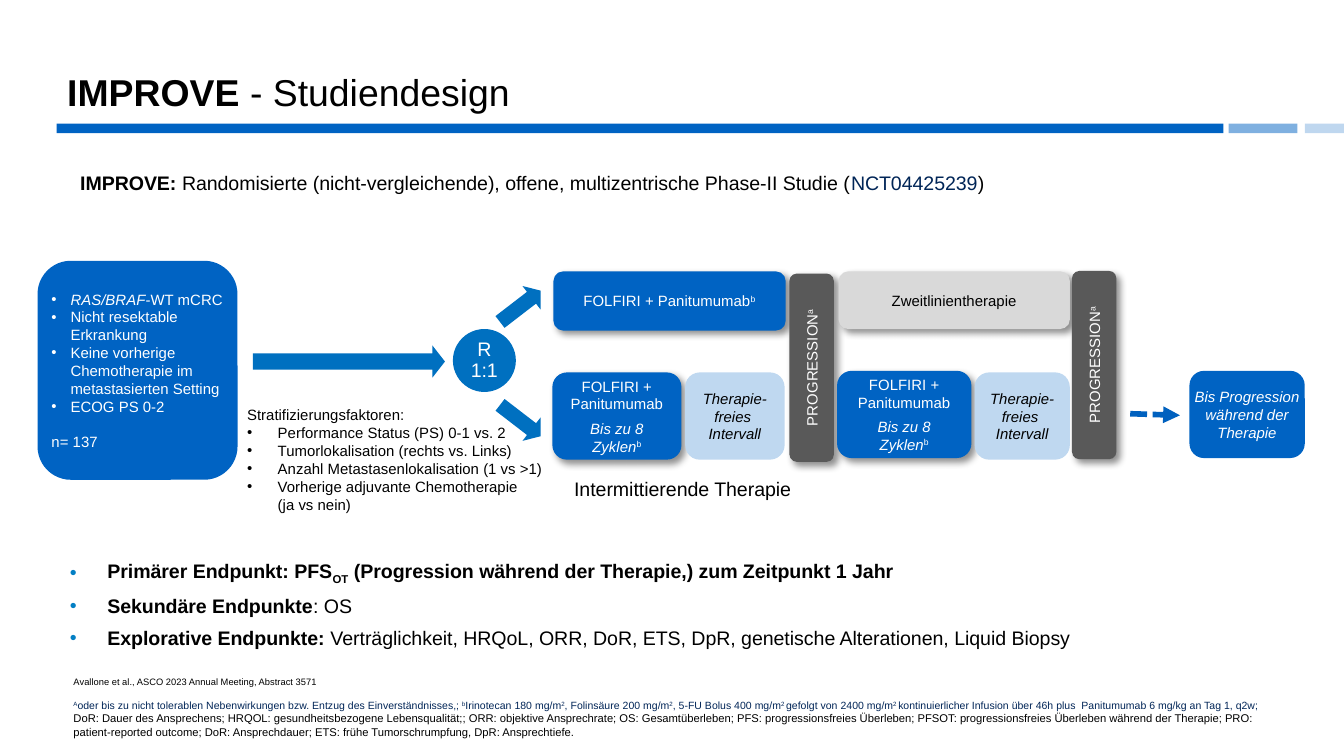
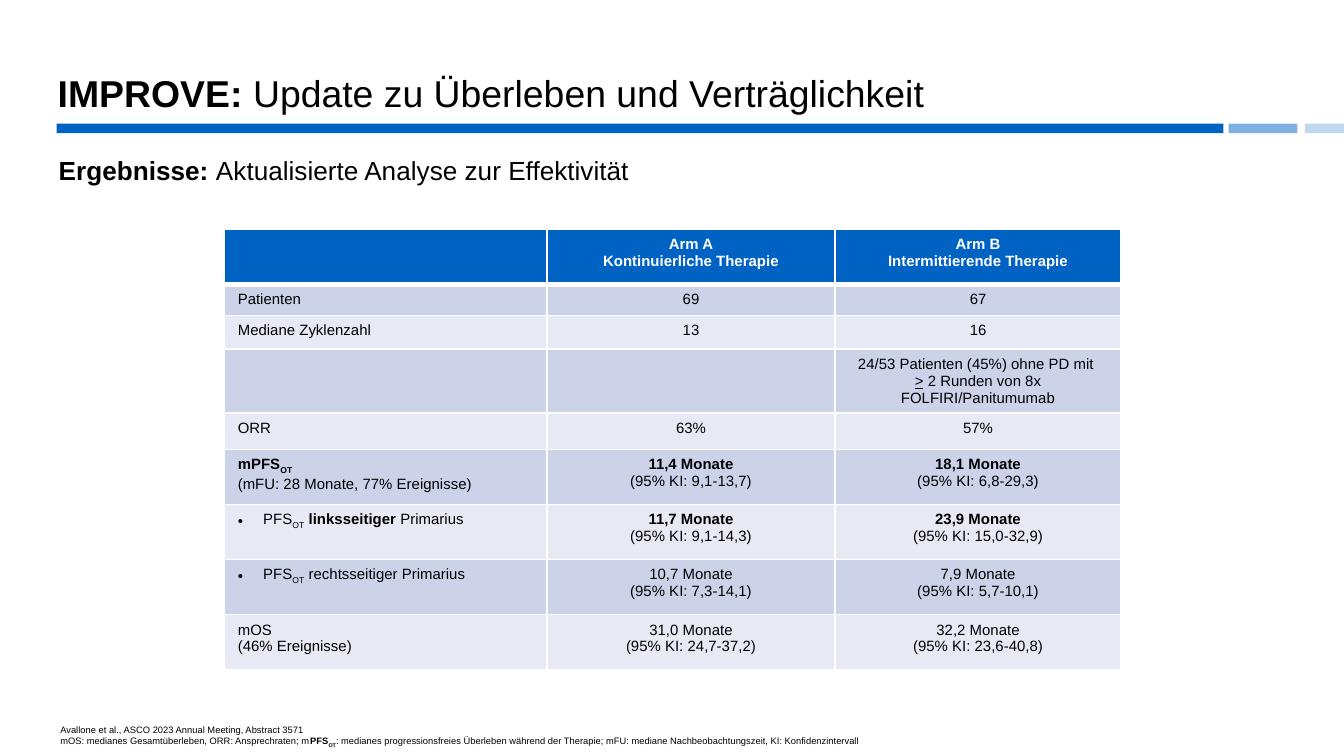
"""Build two slides on the design and the results of the IMPROVE study."""
from dataclasses import dataclass

from lxml import etree
from pptx import Presentation
from pptx.dml.color import RGBColor
from pptx.enum.dml import MSO_LINE
from pptx.enum.shapes import MSO_CONNECTOR, MSO_SHAPE
from pptx.enum.text import MSO_ANCHOR, MSO_AUTO_SIZE, PP_ALIGN
from pptx.oxml import parse_xml
from pptx.oxml.ns import nsdecls, qn
from pptx.shapes.autoshape import Shape
from pptx.slide import Slide
from pptx.table import _Cell
from pptx.text.text import TextFrame, _Paragraph
from pptx.util import Cm, Pt

FONT = "Arial"
BLUE = RGBColor(0x00, 0x63, 0xC3)
ARROW_BLUE = RGBColor(0x00, 0x70, 0xC0)
DASH_BLUE = RGBColor(0x00, 0x61, 0xBF)
BULLET_BLUE = RGBColor(0x03, 0x7F, 0xC4)
PALE_BLUE = RGBColor(0xBF, 0xD8, 0xF0)
NAVY = RGBColor(0x00, 0x25, 0x57)
DARK_GREY = RGBColor(0x59, 0x59, 0x59)
LIGHT_GREY = RGBColor(0xD9, 0xD9, 0xD9)
ROW_DARK = RGBColor(0xCC, 0xD3, 0xE9)
ROW_LIGHT = RGBColor(0xE7, 0xEA, 0xF5)
BLACK = RGBColor(0, 0, 0)
WHITE = RGBColor(0xFF, 0xFF, 0xFF)

LEFT, CENTER = PP_ALIGN.LEFT, PP_ALIGN.CENTER
TOP, MIDDLE, BOTTOM = MSO_ANCHOR.TOP, MSO_ANCHOR.MIDDLE, MSO_ANCHOR.BOTTOM
RECTANGLE, ROUNDED = MSO_SHAPE.RECTANGLE, MSO_SHAPE.ROUNDED_RECTANGLE
OVAL, RIGHT_ARROW = MSO_SHAPE.OVAL, MSO_SHAPE.RIGHT_ARROW
STRAIGHT, SYSTEM_DASH = MSO_CONNECTOR.STRAIGHT, MSO_LINE.SQUARE_DOT
NO_AUTOFIT = MSO_AUTO_SIZE.NONE

SUB, SUPER = -25, 30
DEFAULT_INSETS = (0.25, 0.13, 0.25, 0.13)
CITATION = "Avallone et al., ASCO 2023 Annual Meeting, Abstract 3571"


@dataclass(frozen=True)
class Run:
    """A stretch of text in one format."""
    text: str
    bold: bool = False
    italic: bool = False
    underline: bool = False
    baseline: int = 0
    color: RGBColor | None = None
    size: float | None = None


@dataclass(frozen=True)
class Passage:
    """A paragraph with its indent in centimetres and its spacing."""
    runs: tuple[Run, ...]
    indent: float = 0
    bulleted: bool = False
    bullet_color: RGBColor | None = None
    before: float = 0
    after: float = 0
    spacing: float = 1.0


@dataclass(frozen=True)
class Style:
    """Text settings shared by all passages of a frame."""
    size: float = 8
    color: RGBColor = BLACK
    align: PP_ALIGN = LEFT
    anchor: MSO_ANCHOR = TOP
    insets: tuple[float, float, float, float] = DEFAULT_INSETS
    wrap: bool = True


@dataclass(frozen=True)
class Box:
    """A preset shape, or a text box where kind is None, in centimetres."""
    left: float
    top: float
    width: float
    height: float
    passages: tuple[Passage, ...] = ()
    style: Style = Style()
    kind: MSO_SHAPE | None = None
    fill: RGBColor = BLUE
    alpha: int = 100
    rotation: float = 0
    shadow: bool = False


ON_BLUE = Style(color=WHITE, align=CENTER, anchor=MIDDLE)
ON_PALE = Style(align=CENTER, anchor=MIDDLE, insets=(0, 0.13, 0, 0.13))
IN_END = Style(color=WHITE, align=CENTER, anchor=MIDDLE, insets=(0, 0.13, 0, 0.13))
TITLE_STYLE = Style(size=20, anchor=BOTTOM, insets=(0, 0, 0, 0.13))


def passage(*parts: str | Run, **settings) -> Passage:
    """Make a passage from plain strings and formatted runs."""
    runs = tuple(Run(part) if isinstance(part, str) else part for part in parts)
    return Passage(runs, **settings)


def bullet(*parts: str | Run, indent: float, **settings) -> Passage:
    """Make a bulleted passage."""
    return passage(*parts, indent=indent, bulleted=True, **settings)


def bold(text: str, baseline: int = 0) -> Run:
    """Make a bold run."""
    return Run(text, bold=True, baseline=baseline)


def add_bullet(paragraph: _Paragraph, item: Passage) -> None:
    """Give a paragraph a hanging bullet."""
    properties = paragraph._p.get_or_add_pPr()
    properties.set("marL", str(Cm(item.indent)))
    properties.set("indent", str(-Cm(item.indent)))
    if item.bullet_color is not None:
        color = etree.SubElement(properties, qn("a:buClr"))
        etree.SubElement(color, qn("a:srgbClr"), val=str(item.bullet_color))
    etree.SubElement(properties, qn("a:buFont"), typeface=FONT)
    etree.SubElement(properties, qn("a:buChar"), char="•")


def write_run(paragraph: _Paragraph, item: Run, style: Style) -> None:
    """Add a run, turning its newlines into line breaks of the same size."""
    size = item.size or style.size
    for index, text in enumerate(item.text.split("\n")):
        if index:
            paragraph.add_line_break()
            line_break = paragraph._p.findall(qn("a:br"))[-1]
            etree.SubElement(line_break, qn("a:rPr"), sz=str(round(size * 100)))
        run = paragraph.add_run()
        run.text = text
        font = run.font
        font.name, font.size = FONT, Pt(size)
        font.bold, font.italic, font.underline = item.bold, item.italic, item.underline
        font.color.rgb = style.color if item.color is None else item.color
        if item.baseline:
            run._r.get_or_add_rPr().set("baseline", str(item.baseline * 1000))


def write_passages(frame: TextFrame, passages: tuple[Passage, ...], style: Style) -> None:
    """Fill a text frame with passages."""
    for index, item in enumerate(passages):
        paragraph = frame.add_paragraph() if index else frame.paragraphs[0]
        paragraph.alignment = style.align
        paragraph.line_spacing = item.spacing
        paragraph.space_before, paragraph.space_after = Pt(item.before), Pt(item.after)
        if item.bulleted:
            add_bullet(paragraph, item)
        for run in item.runs:
            write_run(paragraph, run, style)


def format_frame(frame: TextFrame, passages: tuple[Passage, ...], style: Style) -> None:
    """Set up a text frame and write its passages."""
    frame.auto_size = NO_AUTOFIT
    frame.word_wrap = style.wrap
    frame.vertical_anchor = style.anchor
    (frame.margin_left, frame.margin_top,
     frame.margin_right, frame.margin_bottom) = map(Cm, style.insets)
    write_passages(frame, passages, style)


def add_shadow(shape: Shape) -> None:
    """Cast a soft shadow to the lower right."""
    effects = shape._element.spPr.find(qn("a:effectLst"))
    effects.append(parse_xml(
        f'<a:outerShdw {nsdecls("a")} blurRad="{Pt(4)}" dist="{Pt(3)}" dir="2700000" '
        'algn="tl" rotWithShape="0"><a:srgbClr val="000000"><a:alpha val="43000"/>'
        '</a:srgbClr></a:outerShdw>'))


def draw_box(slide: Slide, box: Box) -> None:
    """Draw a shape or a text box."""
    place = [Cm(value) for value in (box.left, box.top, box.width, box.height)]
    if box.kind is None:
        shape = slide.shapes.add_textbox(*place)
    else:
        shape = slide.shapes.add_shape(box.kind, *place)
        shape.shadow.inherit = False
        shape.fill.solid()
        shape.fill.fore_color.rgb = box.fill
        shape.line.fill.background()
        shape.rotation = box.rotation
        if box.kind == RIGHT_ARROW:
            shape.adjustments[1] = 0.39
        if box.alpha < 100:
            color = shape._element.spPr.find(qn("a:solidFill"))[0]
            etree.SubElement(color, qn("a:alpha"), val=str(box.alpha * 1000))
        if box.shadow:
            add_shadow(shape)
    if box.passages:
        format_frame(shape.text_frame, box.passages, box.style)


def start_slide(presentation: Presentation, place: tuple[float, ...], title: Passage) -> Slide:
    """Add a slide with its title and the band below it."""
    slide = presentation.slides.add_slide(presentation.slide_layouts[5])
    shape = slide.shapes.title
    shape.left, shape.top, shape.width, shape.height = map(Cm, place)
    format_frame(shape.text_frame, (title,), TITLE_STYLE)
    for left, width, alpha in ((1.07, 22.05, 100), (23.22, 1.3, 50), (24.66, 0.74, 25)):
        draw_box(slide, Box(left, 2.34, width, 0.18, kind=RECTANGLE, alpha=alpha))
    return slide


def cycle_box(left: float, top: float, width: float) -> Box:
    """Describe a block of treatment cycles."""
    cycles = passage(Run("Bis zu 8 Zyklen", italic=True), Run("b", baseline=SUPER))
    return Box(left, top, width, 1.65, (passage("FOLFIRI + Panitumumab", after=3.4), cycles),
               ON_BLUE, ROUNDED, shadow=True)


def pause_box(left: float, width: float) -> Box:
    """Describe a treatment-free interval."""
    text = passage(Run("Therapie-freies \nIntervall", italic=True))
    return Box(left, 7.04, width, 1.65, (text,), ON_PALE, ROUNDED, PALE_BLUE)


def progression_box(left: float, top: float) -> Box:
    """Describe an upright progression bar."""
    text = passage("PROGRESSION", Run("a", baseline=SUPER))
    return Box(left, top, 3.56, 0.84, (text,), ON_BLUE, ROUNDED, DARK_GREY,
               rotation=270, shadow=True)


def arrow(left: float, top: float, width: float, height: float, rotation: float = 0) -> Box:
    """Describe a block arrow."""
    return Box(left, top, width, height, kind=RIGHT_ARROW, fill=ARROW_BLUE, rotation=rotation)


def draw_dashed_arrow(slide: Slide) -> None:
    """Draw the dashed arrow to the last treatment phase."""
    connector = slide.shapes.add_connector(STRAIGHT, Cm(21.36), Cm(7.82), Cm(22.3), Cm(7.85))
    connector.line.color.rgb = DASH_BLUE
    connector.line.width = Pt(3)
    connector.line.dash_style = SYSTEM_DASH
    etree.SubElement(connector.line._get_or_add_ln(), qn("a:tailEnd"), type="triangle")
    etree.SubElement(connector._element.spPr, qn("a:effectLst"))


def build_design(presentation: Presentation) -> None:
    """Build the slide on the study design."""
    slide = start_slide(presentation, (1.27, 0.66, 22.86, 1.63),
                        passage(bold("IMPROVE"), " - Studiendesign", spacing=0.9))
    point = {"indent": 0.71, "bullet_color": BULLET_BLUE, "after": 4.5}
    endpoints = (
        bullet(bold("Primärer Endpunkt: PFS"), bold("OT", SUB),
               bold(" (Progression während der Therapie,) zum Zeitpunkt 1 Jahr"), **point),
        bullet(bold("Sekundäre Endpunkte"), ": OS", **point),
        bullet(bold("Explorative Endpunkte: "), "Verträglichkeit, HRQoL, ORR, DoR, ETS, DpR, "
               "genetische Alterationen, Liquid Biopsy", **point))
    intro = passage(
        bold("IMPROVE: "), "Randomisierte (nicht-vergleichende), offene, multizentrische "
        "Phase-II Studie (", Run("NCT04425239", color=NAVY), ")")
    criteria = (
        bullet(Run("RAS/BRAF", italic=True), "-WT mCRC", indent=0.36),
        *(bullet(text, indent=0.36) for text in (
            "Nicht resektable Erkrankung",
            "Keine vorherige Chemotherapie im metastasierten Setting", "ECOG PS 0-2")),
        passage("n= 137", before=9.2))
    factors = (passage("Stratifizierungsfaktoren:"), *(bullet(text, indent=0.58) for text in (
        "Performance Status (PS) 0-1 vs. 2", "Tumorlokalisation (rechts vs. Links)",
        "Anzahl Metastasenlokalisation (1 vs >1)",
        "Vorherige adjuvante Chemotherapie \n(ja vs nein)")))
    dosing = (("A", SUPER), ("oder bis zu nicht tolerablen Nebenwirkungen bzw. Entzug des "
              "Einverständnisses,; ", 0), ("b", SUPER), ("Irinotecan 180 mg/m", 0), ("2", SUPER),
              (", Folinsäure 200 mg/m", 0), ("2", SUPER), (", 5-FU Bolus 400 mg/m", 0),
              ("2 ", SUPER), ("gefolgt von 2400 mg/m", 0), ("2 ", SUPER),
              ("kontinuierlicher Infusion über 46h plus  Panitumumab 6 mg/kg an Tag 1, q2w; ", 0))
    footnote = passage(
        *(Run(text, baseline=base, color=NAVY, size=5.6) for text, base in dosing),
        Run("DoR: Dauer des Ansprechens; HRQOL: gesundheitsbezogene Lebensqualität;; ORR: objektive "
            "Ansprechrate; OS: Gesamtüberleben; PFS: progressionsfreies Überleben; PFSOT: "
            "progressionsfreies Überleben während der Therapie; PRO: patient-reported outcome; DoR: "
            "Ansprechdauer; ETS: frühe Tumorschrumpfung, DpR: Ansprechtiefe.", size=6), before=6.4)
    continuous = passage("FOLFIRI + Panitumumab", Run("b", baseline=SUPER))
    last_phase = passage(Run("Bis Progression während der Therapie", italic=True))
    ratio = tuple(passage(text, spacing=0.9) for text in ("R", "1:1"))
    heading = Style(size=10.5, align=CENTER)
    for box in (
            Box(1.07, 10.44, 22.05, 2.29, endpoints, Style(size=10.5)),
            Box(1.07, 3.1, 17.98, 0.71, (intro,), heading),
            Box(10.46, 5.13, 4.39, 1.12, (continuous,), ON_BLUE, ROUNDED, shadow=True),
            cycle_box(10.44, 7.04, 2.44), progression_box(13.56, 6.53),
            Box(15.85, 5.13, 4.37, 1.09, (passage("Zweitlinientherapie"),),
                Style(align=CENTER, anchor=MIDDLE), ROUNDED, LIGHT_GREY, shadow=True),
            pause_box(12.95, 1.88),
            Box(22.48, 7.01, 2.18, 1.65, (last_phase,), IN_END, ROUNDED),
            progression_box(18.9, 6.48),
            arrow(9.35, 5.51, 0.97, 0.56, 322.4), arrow(4.78, 6.53, 3.63, 0.61),
            Box(8.56, 6.22, 1.19, 1.19, ratio, Style(10.5, WHITE, CENTER, MIDDLE, wrap=False),
                OVAL, ARROW_BLUE),
            arrow(9.35, 7.67, 0.97, 0.56, 37.6),
            Box(4.42, 7.54, 6.35, 2.31, factors),
            Box(10.24, 8.89, 5.33, 0.71, (passage("Intermittierende Therapie"),), heading),
            Box(0.71, 4.93, 3.78, 4.14, criteria,
                Style(color=WHITE, anchor=MIDDLE, insets=(0.08, 0.13, 0.08, 0.13)), ROUNDED),
            Box(1.14, 12.65, 23.14, 1.37, (passage(CITATION), footnote), Style(size=5)),
            cycle_box(15.82, 7.01, 2.54), pause_box(18.42, 1.8)):
        draw_box(slide, box)
    draw_dashed_arrow(slide)


def format_cell(cell: _Cell, row: int, fill: RGBColor) -> None:
    """Fill a table cell and give it white borders."""
    cell.fill.solid()
    cell.fill.fore_color.rgb = fill
    for index, side in enumerate("LRB" if row else "LRTB"):
        width = Pt(3) if row == 0 and side == "B" else Pt(1)
        cell._tc.get_or_add_tcPr().insert(index, parse_xml(
            f'<a:ln{side} {nsdecls("a")} w="{width}"><a:solidFill><a:srgbClr val="{WHITE}"/>'
            f'</a:solidFill></a:ln{side}>'))


def result(value: str, interval: str, strong: bool = False) -> tuple[Passage, ...]:
    """Make a median in months above its confidence interval."""
    return passage(Run(f"{value} Monate", bold=strong)), passage(f"(95% KI: {interval})")


def build_results(presentation: Presentation) -> None:
    """Build the slide on the efficacy results."""
    slide = start_slide(presentation, (1.09, 1.04, 23.42, 1.27), passage(
        bold("IMPROVE: "), "Update zu Überleben und Verträglichkeit", spacing=0.9))
    subtitle = passage(bold("Ergebnisse: "), "Aktualisierte Analyse zur Effektivität", spacing=0.95)
    abbreviations = passage(
        "mOS: medianes Gesamtüberleben, ORR: Ansprechraten; m", bold("PFS"), bold("OT", SUB),
        ": medianes progressionsfreies Überleben während der Therapie; mFU: mediane "
        "Nachbeobachtungszeit, KI: Konfidenzintervall")
    draw_box(slide, Box(0.86, 2.84, 23.22, 1.17, (subtitle,), Style(size=14)))
    draw_box(slide, Box(0.89, 13.56, 16.15, 0.73, (passage(CITATION), abbreviations), Style(size=5)))
    small_ot = Run("OT", baseline=SUB)
    rounds = passage("24/53 Patienten (45%) ohne PD mit \n", Run(">", underline=True),
                     " 2 Runden von 8x FOLFIRI/Panitumumab")
    rows = (
        ((), *((passage(bold(f"Arm {arm}")), passage(bold(f"{kind} Therapie")))
               for arm, kind in (("A", "Kontinuierliche"), ("B", "Intermittierende")))),
        *(tuple((passage(text),) for text in texts) for texts in (
            ("Patienten", "69", "67"), ("Mediane Zyklenzahl", "13", "16"))),
        ((), (), (rounds,)),
        tuple((passage(text),) for text in ("ORR", "63%", "57%")),
        ((passage(bold("mPFS"), bold("OT", SUB)), passage("(mFU: 28 Monate, 77% Ereignisse)")),
         result("11,4", "9,1-13,7", True), result("18,1", "6,8-29,3", True)),
        ((bullet("PFS", small_ot, bold(" linksseitiger"), " Primarius", indent=0.48),),
         result("11,7", "9,1-14,3", True), result("23,9", "15,0-32,9", True)),
        ((bullet("PFS", small_ot, " rechtsseitiger Primarius", indent=0.48),),
         result("10,7", "7,3-14,1"), result("7,9", "5,7-10,1")),
        ((passage("mOS"), passage("(46% Ereignisse)")),
         result("31,0", "24,7-37,2"), result("32,2", "23,6-40,8")))
    widths = (6.1, 5.44, 5.41)
    heights = (1.04, 0.58, 0.64, 0.94, 0.69, 1.04, 1.04, 1.04, 1.04)
    table = slide.shapes.add_table(len(rows), len(widths), Cm(4.24), Cm(4.34),
                                   Cm(sum(widths)), Cm(sum(heights))).table
    for column, width in zip(table.columns, widths):
        column.width = Cm(width)
    for row, (passages_by_column, height) in enumerate(zip(rows, heights)):
        table.rows[row].height = Cm(height)
        fill = (ROW_DARK if row % 2 else ROW_LIGHT) if row else BLUE
        for column, passages in enumerate(passages_by_column):
            cell = table.cell(row, column)
            format_cell(cell, row, fill)
            write_passages(cell.text_frame, passages, Style(
                color=BLACK if row else WHITE, align=CENTER if column else LEFT))


def main() -> None:
    """Create and save the presentation."""
    presentation = Presentation()
    presentation.slide_width, presentation.slide_height = Cm(25.4), Cm(14.29)
    build_design(presentation)
    build_results(presentation)
    presentation.save("out.pptx")


if __name__ == "__main__":
    main()
